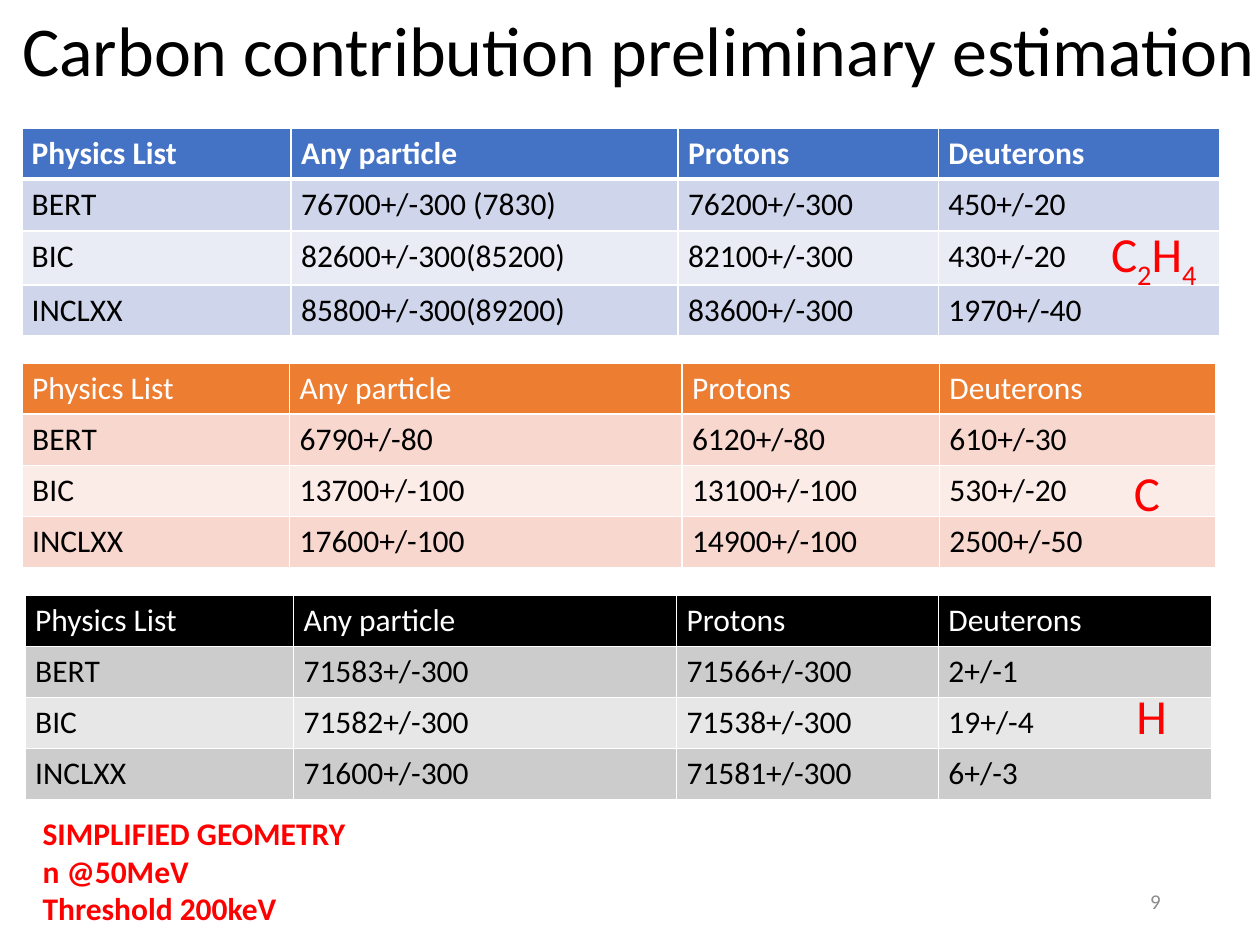
from pptx import Presentation, util as u
from pptx.dml.color import RGBColor
from pptx.enum import text
from pptx.oxml import parse_xml
from pptx.oxml.ns import nsdecls

FONT = "Calibri"
COLORS = {"white": "FFFFFF", "black": "000000", "red": "FF0000", "gray": "8C8C8C"}
HEADER = ["Physics List", "Any particle", "Protons", "Deuterons"]
MODELS = ["BERT", "BIC", "INCLXX"]
TABLES = [
    {"at": (0.44, 2.59), "cols": (5.43, 7.8, 5.25, 5.66), "rows": (1.02, 1.05, 1.09, 1.01),
     "fills": ("4472C4", "CFD5EA", "E9EBF5"), "bold": True, "rule": 3,
     "data": [("76700+/-300 (7830)", "76200+/-300", "450+/-20"),
              ("82600+/-300(85200)", "82100+/-300", "430+/-20"),
              ("85800+/-300(89200)", "83600+/-300", "1970+/-40")]},
    {"at": (0.45, 7.32), "cols": (5.39, 7.91, 5.19, 5.56), "rows": (1.03,) * 4,
     "fills": ("ED7D31", "F8D7CE", "FCECE8"), "bold": False, "rule": 1,
     "data": [("6790+/-80", "6120+/-80", "610+/-30"),
              ("13700+/-100", "13100+/-100", "530+/-20"),
              ("17600+/-100", "14900+/-100", "2500+/-50")]},
    {"at": (0.51, 12.0), "cols": (5.41, 7.72, 5.28, 5.51), "rows": (1.03,) * 4,
     "fills": ("000000", "CCCCCC", "E7E7E7"), "bold": False, "rule": 1,
     "data": [("71583+/-300", "71566+/-300", "2+/-1"),
              ("71582+/-300", "71538+/-300", "19+/-4"),
              ("71600+/-300", "71581+/-300", "6+/-3")]},
]
NOTES = ["SIMPLIFIED GEOMETRY", "n @50MeV", "Threshold 200keV"]
MATERIALS = [
    ((22.15, 4.39, 3.25, 1.45), [("C", 0), ("2", -25), ("H", 0), ("4", -25)]),
    ((22.61, 9.19, 1.52, 1.45), [("C", 0)]),
    ((22.66, 13.69, 1.52, 1.45), [("H", 0)]),
]


def style(p, size, color, bold=False):
    p.font.size = u.Pt(size)
    p.font.name = FONT
    p.font.bold = bold
    p.font.color.rgb = RGBColor.from_string(COLORS[color])


def add_text(s, box, lines, size, color, bold=False, middle=False):
    tf = s.shapes.add_textbox(*map(u.Cm, box)).text_frame
    tf.word_wrap = True
    if middle:
        tf.vertical_anchor = text.MSO_ANCHOR.MIDDLE
    for i, runs in enumerate(lines):
        p = tf.add_paragraph() if i else tf.paragraphs[0]
        for content, baseline in runs:
            r = p.add_run()
            r.text = content
            if baseline:
                r._r.get_or_add_rPr().set("baseline", str(baseline * 1000))
        style(p, size, color, bold)
    return tf.paragraphs[0]


def set_borders(cell, top, bottom):
    tcPr = cell._tc.get_or_add_tcPr()
    for side, width in (("L", 1), ("R", 1), ("T", top), ("B", bottom)):
        tcPr.append(parse_xml(
            f'<a:ln{side} {nsdecls("a")} w="{u.Pt(width)}"><a:solidFill>'
            f'<a:srgbClr val="{COLORS["white"]}"/></a:solidFill></a:ln{side}>'))


def add_table(s, t):
    cols, rows = t["cols"], t["rows"]
    box = (*t["at"], sum(cols), sum(rows))
    table = s.shapes.add_table(len(rows), len(cols), *map(u.Cm, box)).table
    for column, width in zip(table.columns, cols):
        column.width = u.Cm(width)
    for row, height in zip(table.rows, rows):
        row.height = u.Cm(height)
    values = [HEADER] + [(m, *d) for m, d in zip(MODELS, t["data"])]
    head, odd, even = t["fills"]
    for i, line in enumerate(values):
        for j, value in enumerate(line):
            cell = table.cell(i, j)
            cell.margin_left = cell.margin_right = u.Cm(0.2)
            cell.margin_top = cell.margin_bottom = u.Cm(0.12)
            set_borders(cell, t["rule"] if i == 1 else 1, t["rule"] if i == 0 else 1)
            cell.fill.solid()
            cell.fill.fore_color.rgb = RGBColor.from_string((head, odd, even, odd)[i])
            cell.text = value
            style(cell.text_frame.paragraphs[0], 18, "black" if i else "white",
                  t["bold"] and i == 0)


def main():
    prs = Presentation()
    prs.slide_width, prs.slide_height = u.Cm(25.4), u.Cm(19.05)
    s = prs.slides.add_slide(prs.slide_layouts[6])
    for t in TABLES:
        add_table(s, t)
    add_text(s, (0.61, 16.28, 10.26, 2.57), [[(n, 0)] for n in NOTES], 18, "red", bold=True)
    for box, runs in MATERIALS:
        add_text(s, box, [runs], 28, "red")
    p = add_text(s, (17.93, 17.65, 5.72, 1.02), [[("9", 0)]], 12, "gray", middle=True)
    p.alignment = text.PP_ALIGN.RIGHT
    p = add_text(s, (0.2, -0.25, 26.62, 2.67),
                 [[("Carbon contribution preliminary estimation", 0)]], 40, "black", middle=True)
    p.line_spacing = 0.9
    prs.save("out.pptx")


if __name__ == "__main__":
    main()
